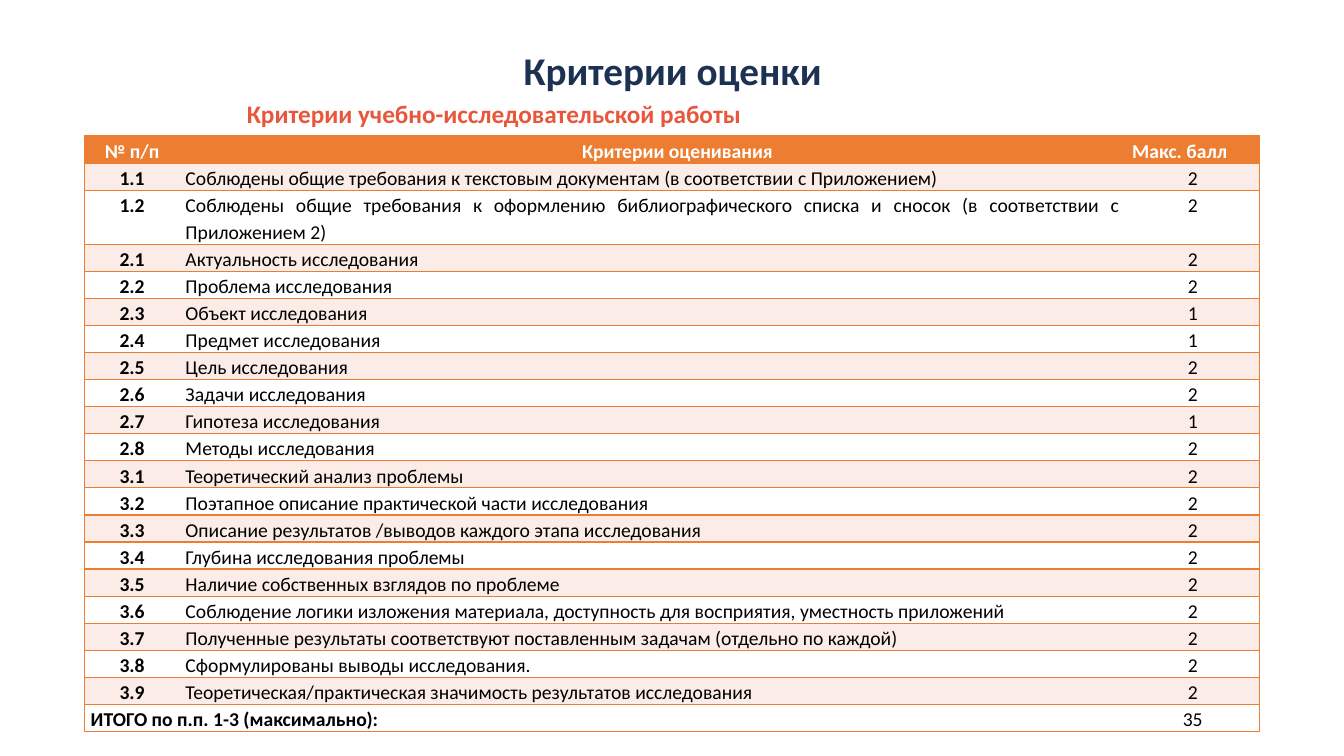
from lxml import etree
from pptx import Presentation
from pptx.dml.color import RGBColor
from pptx.enum.text import MSO_ANCHOR, PP_ALIGN
from pptx.oxml.ns import qn
from pptx.util import Inches, Pt

LEFT, CENTER, JUSTIFY = PP_ALIGN.LEFT, PP_ALIGN.CENTER, PP_ALIGN.JUSTIFY
MIDDLE = MSO_ANCHOR.MIDDLE
FONT = "Calibri"
COLORS = {
    "title": "1D3152",
    "subtitle": "E8573B",
    "accent": "ED7D31",
    "band": "FCECE8",
    "white": "FFFFFF",
    "text": "000000",
}
PLAIN_TABLE_STYLE = "{2D5ABB26-0587-4C30-8999-92F81FD0307C}"
MARGIN, CONTENT_WIDTH = 0.84, 11.66
COLUMN_WIDTHS = (0.94, 9.39, 1.32)
ROW_HEIGHT = 0.26

HEADER = ("№ п/п", "Критерии оценивания", "Макс. балл")
CRITERIA = [
    ("1.1", "Соблюдены общие требования к текстовым документам (в соответствии с Приложением)", "2"),
    ("1.2", "Соблюдены общие требования к оформлению библиографического списка и сносок "
            "(в соответствии с Приложением 2)", "2"),
    ("2.1", "Актуальность исследования", "2"),
    ("2.2", "Проблема исследования", "2"),
    ("2.3", "Объект исследования", "1"),
    ("2.4", "Предмет исследования", "1"),
    ("2.5", "Цель исследования", "2"),
    ("2.6", "Задачи исследования", "2"),
    ("2.7", "Гипотеза исследования", "1"),
    ("2.8", "Методы исследования", "2"),
    ("3.1", "Теоретический анализ проблемы", "2"),
    ("3.2", "Поэтапное описание практической части исследования", "2"),
    ("3.3", "Описание результатов /выводов каждого этапа исследования", "2"),
    ("3.4", "Глубина исследования проблемы", "2"),
    ("3.5", "Наличие собственных взглядов по проблеме", "2"),
    ("3.6", "Соблюдение логики изложения материала, доступность для восприятия, "
            "уместность приложений", "2"),
    ("3.7", "Полученные результаты соответствуют поставленным задачам (отдельно по каждой)", "2"),
    ("3.8", "Сформулированы выводы исследования.", "2"),
    ("3.9", "Теоретическая/практическая значимость результатов исследования", "2"),
]
TOTAL = ("ИТОГО по п.п. 1-3 (максимально):", "", "35")


def write_text(frame, text, size, color, bold, align):
    para = frame.paragraphs[0]
    para.text = text
    para.alignment = align
    for span in para.runs:
        span.font.name = FONT
        span.font.size = Pt(size)
        span.font.bold = bold
        span.font.color.rgb = RGBColor.from_string(COLORS[color])
    return para


def add_borders(cell, sides):
    properties = cell._tc.get_or_add_tcPr()
    for side in sides:
        line = etree.SubElement(properties, qn(f"a:ln{side}"), w=str(Pt(1)))
        fill = etree.SubElement(line, qn("a:solidFill"))
        etree.SubElement(fill, qn("a:srgbClr"), val=COLORS["accent"])


deck = Presentation()
deck.slide_width, deck.slide_height = Inches(13.33), Inches(7.5)
page = deck.slides.add_slide(deck.slide_layouts[5])

title = page.shapes.title
title.left, title.top = Inches(MARGIN), Inches(0.38)
title.width, title.height = Inches(CONTENT_WIDTH), Inches(0.63)
title_frame = title.text_frame
title_frame.margin_left = title_frame.margin_right = Inches(0.05)
title_frame.margin_top = title_frame.margin_bottom = Inches(0.05)
title_frame.vertical_anchor = MIDDLE
write_text(title_frame, "Критерии оценки", 28, "title", True, CENTER)

subtitle = page.shapes.add_textbox(Inches(2.35), Inches(0.88), Inches(10.14), Inches(0.43))
subtitle.text_frame.word_wrap = True
subtitle_para = write_text(subtitle.text_frame, "Критерии учебно-исследовательской работы",
                           18, "subtitle", True, LEFT)
subtitle_para.line_spacing = 1.15

rows = [HEADER, *CRITERIA, TOTAL]
last_row, last_column = len(rows) - 1, len(HEADER) - 1
table = page.shapes.add_table(
    len(rows), len(HEADER), Inches(MARGIN), Inches(1.35),
    Inches(CONTENT_WIDTH), Inches(ROW_HEIGHT * len(rows)),
).table
table._tbl.tblPr.find(qn("a:tableStyleId")).text = PLAIN_TABLE_STYLE
for column, width in zip(table.columns, COLUMN_WIDTHS):
    column.width = Inches(width)
table.cell(last_row, 0).merge(table.cell(last_row, 1))

for row_index, values in enumerate(rows):
    is_header, is_total = row_index == 0, row_index == last_row
    fill = "accent" if is_header else "band" if row_index % 2 else "white"
    aligns = (CENTER, CENTER, LEFT) if is_header else (CENTER, JUSTIFY, CENTER)
    for column_index, value in enumerate(values):
        cell = table.cell(row_index, column_index)
        cell.margin_left = cell.margin_right = Inches(0.06)
        cell.margin_top = cell.margin_bottom = 0
        add_borders(cell, {0: "LTB", last_column: "RTB"}.get(column_index, "TB"))
        cell.fill.solid()
        cell.fill.fore_color.rgb = RGBColor.from_string(COLORS[fill])
        align = LEFT if is_total and column_index == 0 else aligns[column_index]
        para = write_text(cell.text_frame, value, 14, "white" if is_header else "text",
                          is_header or column_index == 0, align)
        para.line_spacing = 1.15
    table.rows[row_index].height = Inches(ROW_HEIGHT)

heading_para = table.cell(0, 1).text_frame.paragraphs[0]
heading_para._p.get_or_add_pPr().set("indent", str(Inches(0.49)))

deck.save("out.pptx")
